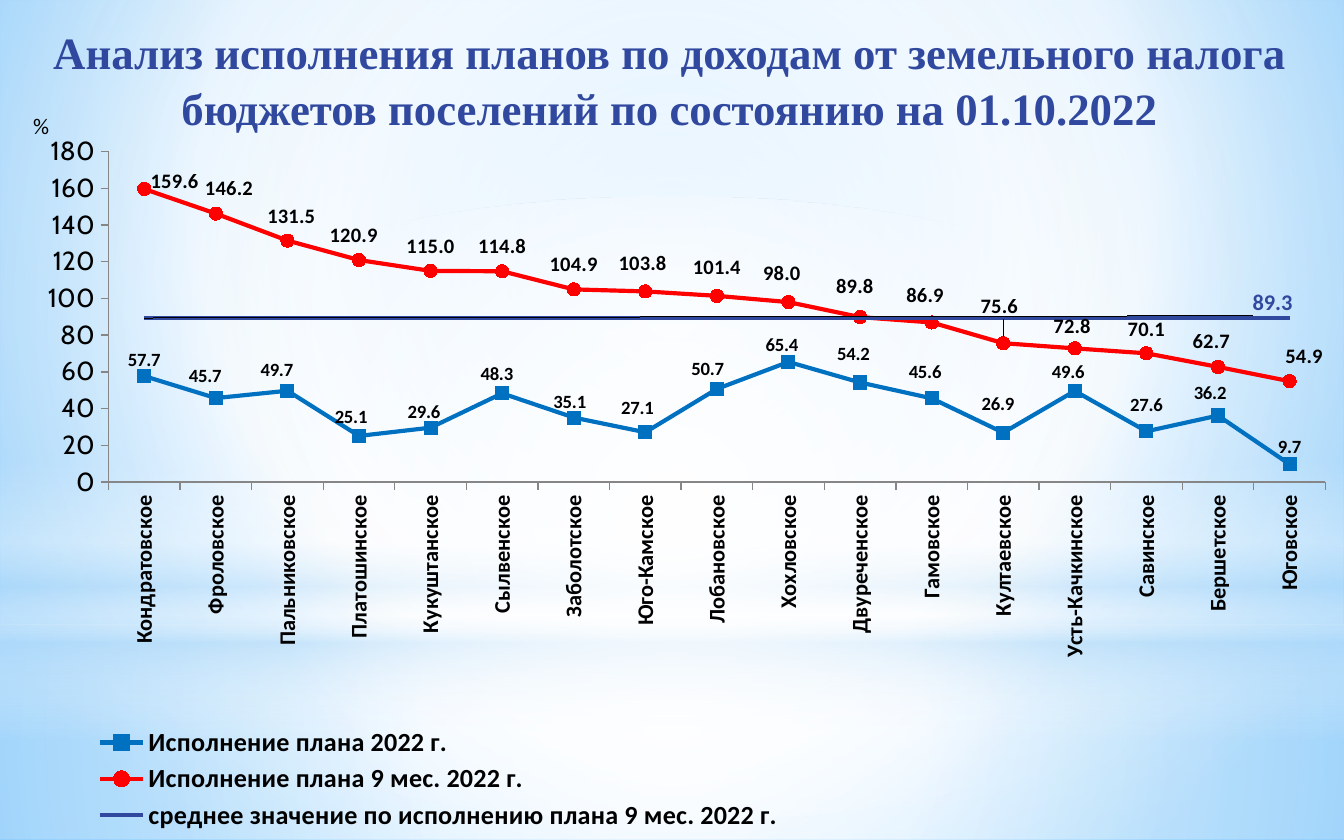
from lxml.etree import SubElement
from pptx import Presentation
from pptx.chart.data import CategoryChartData
from pptx.dml.color import RGBColor
from pptx.enum.chart import (XL_CHART_TYPE, XL_LABEL_POSITION, XL_LEGEND_POSITION,
                             XL_MARKER_STYLE, XL_TICK_MARK)
from pptx.enum.shapes import MSO_SHAPE
from pptx.enum.text import PP_ALIGN
from pptx.oxml.ns import qn
from pptx.util import Cm, Pt

COLORS = {"navy": "31489F", "blue": "0070C0", "red": "FF0000", "black": "000000",
          "axis": "868686", "white": "FFFFFF", "pale": "B4DCFA",
          "sky": "9ED5FF", "deep_sky": "5BB9FF"}
CENTER = (50, 50, 50, 50)
TITLE = ("Анализ исполнения планов по доходам от земельного налога "
         "бюджетов поселений по состоянию на 01.10.2022")
SETTLEMENTS = ["Кондратовское", "Фроловское", "Пальниковское", "Платошинское",
               "Кукуштанское", "Сылвенское", "Заболотское", "Юго-Камское",
               "Лобановское", "Хохловское", "Двуреченское", "Гамовское",
               "Култаевское", "Усть-Качкинское", "Савинское", "Бершетское",
               "Юговское"]
# Label shifts are in thousandths of the chart's width and height, by point.
SERIES = [
    {"name": "Исполнение плана 2022 г.", "color": "blue", "size": 10,
     "marker": XL_MARKER_STYLE.SQUARE, "label_all": True,
     "values": [57.7, 45.7, 49.7, 25.1, 29.6, 48.3, 35.1, 27.1, 50.7, 65.4,
                54.2, 45.6, 26.9, 49.6, 27.6, 36.2, 9.7],
     "label_color": "black",
     "shifts": dict(enumerate([
         (0, 8), (-8, 0), (-8, 3), (-6, 5), (-5, 9), (-4, 4), (-3, 9), (-6, -3),
         (-7, 3), (-5, 7), (-5, -8), (-5, -5), (-4, -8), (-5, 5), (0, -5),
         (-6, 0), (0, 7)]))},
    {"name": "Исполнение плана 9 мес. 2022 г.", "color": "red", "size": 11,
     "marker": XL_MARKER_STYLE.CIRCLE, "label_all": True,
     "values": [159.6, 146.2, 131.5, 120.9, 115, 114.8, 104.9, 103.8, 101.4, 98,
                89.8, 86.9, 75.6, 72.8, 70.1, 62.7, 54.9],
     "label_color": "black",
     "shifts": {0: (23, 23), 1: (10, -1), 2: (3, 1), 3: (-4, 0), 7: (-2, -5),
                8: (0, -5), 9: (-5, -5), 10: (-4, -8), 11: (-5, -3),
                12: (-3, -16), 13: (-2, 4), 14: (0, 1), 15: (-5, -1),
                16: (11, 0)}},
    {"name": "среднее значение по исполнению плана 9 мес. 2022 г.",
     "color": "navy", "size": 12, "marker": XL_MARKER_STYLE.NONE,
     "label_all": False, "values": [89.3] * len(SETTLEMENTS),
     "label_color": "navy", "shifts": {0: (853, 4)}},
]


def rgb(name):
    return RGBColor.from_string(COLORS[name])


def set_font(font, color="black", **fmt):
    for key, value in fmt.items():
        setattr(font, key, value)
    font.color.rgb = rgb(color)


def set_gradient(fill, owner, stops, focus=None, angle=90):
    """Fill with (percent, colour, opacity) stops, round a focus or along an angle."""
    fill.gradient()
    grad = owner.xpath(".//a:gradFill")[0]
    for child in list(grad):
        grad.remove(child)
    gs_list = SubElement(grad, qn("a:gsLst"))
    for pos, color, opacity in stops:
        gs = SubElement(gs_list, qn("a:gs"), pos=str(pos * 1000))
        clr = SubElement(gs, qn("a:srgbClr"), val=COLORS[color])
        SubElement(clr, qn("a:alpha"), val=str(opacity * 1000))
    if focus:
        way = SubElement(grad, qn("a:path"), path="circle")
        SubElement(way, qn("a:fillToRect"),
                   {side: str(v * 1000) for side, v in zip("ltrb", focus)})
    else:
        SubElement(grad, qn("a:lin"), ang=str(angle * 60000), scaled="0")


def add_glow(slide, kind, top, height, stops, focus=None):
    """Add a translucent gradient shape over the whole slide width."""
    sp = slide.shapes.add_shape(kind, 0, Cm(top), Cm(25.4), Cm(height))
    sp.shadow.inherit = False
    sp.line.fill.background()
    set_gradient(sp.fill, sp.element, stops, focus)


def add_backdrop(slide):
    set_gradient(slide.background.fill, slide.element,
                 [(0, "sky", 100), (60, "white", 100), (100, "deep_sky", 100)],
                 (20, 10, 20, 60))
    rect = MSO_SHAPE.RECTANGLE
    add_glow(slide, rect, 11.81, 4.06,
             [(0, "white", 91), (37, "white", 76), (100, "pale", 79)], CENTER)
    add_glow(slide, rect, 0, 11.81,
             [(0, "white", 89), (48, "white", 62), (100, "pale", 79)], CENTER)
    add_glow(slide, rect, 8.71, 5.28,
             [(0, "white", 0), (29, "white", 30), (45, "pale", 40),
              (55, "white", 26), (65, "pale", 60), (100, "white", 0)])
    add_glow(slide, MSO_SHAPE.OVAL, 3.71, 11.81,
             [(0, "white", 100), (56, "white", 0)], CENTER)


def add_title(slide):
    tf = slide.shapes.add_textbox(0, Cm(0.3), Cm(25.3), Cm(2.4)).text_frame
    tf.word_wrap = True
    p = tf.paragraphs[0]
    p.alignment = PP_ALIGN.CENTER
    p.line_spacing = 1.04
    r = p.add_run()
    r.text = TITLE
    set_font(r.font, "navy", name="Times New Roman", size=Pt(24), bold=True)


def place(chart, before, modes=(), **box):
    """Put a manual layout behind the chart element found by the XPath."""
    anchor = chart.element.xpath(before)[0]
    for old in anchor.getparent().findall(qn("c:layout")):
        anchor.getparent().remove(old)
    layout = anchor.makeelement(qn("c:layout"), {})
    manual = SubElement(layout, qn("c:manualLayout"))
    for tag, value in [*modes, *box.items()]:
        SubElement(manual, qn(f"c:{tag}"), val=str(value))
    anchor.addnext(layout)


def style_series(chart, number, ser, spec):
    ser.smooth = False
    ser.format.line.color.rgb = rgb(spec["color"])
    ser.format.line.width = Pt(2.25)
    ser.marker.style = spec["marker"]
    if spec["marker"] != XL_MARKER_STYLE.NONE:
        ser.marker.size = 7
        ser.marker.format.fill.solid()
        ser.marker.format.fill.fore_color.rgb = rgb(spec["color"])
        ser.marker.format.line.color.rgb = rgb(spec["color"])
    fmt = {"name": "Calibri", "size": Pt(spec["size"]), "bold": True}
    labels = ser.data_labels
    labels.show_value = spec["label_all"]
    labels.position = XL_LABEL_POSITION.ABOVE
    set_font(labels.font, spec["label_color"], **fmt)
    for i, (dx, dy) in spec["shifts"].items():
        label = ser.points[i].data_label
        set_font(label.font, spec["label_color"], **fmt)
        label.position = XL_LABEL_POSITION.ABOVE
        place(chart, f".//c:ser[{number}]//c:dLbl/c:idx[@val='{i}']",
              x=dx / 1000, y=dy / 1000)


def style_axes(chart):
    cat, val = chart.category_axis, chart.value_axis
    for axis in (cat, val):
        axis.has_major_gridlines = False
        axis.major_tick_mark = XL_TICK_MARK.OUTSIDE
        axis.format.line.color.rgb = rgb("axis")
    set_font(cat.tick_labels.font, name="Calibri", size=Pt(12), bold=True)
    chart.element.xpath(".//c:catAx/c:txPr/a:bodyPr")[0].set("rot", "-5400000")
    set_font(val.tick_labels.font, name="Cabin", size=Pt(14), bold=False)
    for key, value in {"minimum_scale": 0, "maximum_scale": 180, "major_unit": 20}.items():
        setattr(val, key, value)
    val.tick_labels.number_format = "#,##0"
    val.tick_labels.number_format_is_linked = False
    tf = val.axis_title.text_frame
    tf.text = "%"
    set_font(tf.paragraphs[0].runs[0].font, name="Calibri", size=Pt(12), bold=False)
    chart.element.xpath(".//c:valAx/c:title//a:bodyPr")[0].set("rot", "0")
    place(chart, ".//c:valAx/c:title/c:tx",
          [("xMode", "edge"), ("yMode", "edge")], x=0.01, y=0.02)


def add_line_chart(slide):
    data = CategoryChartData(number_format="#,##0.0")
    data.categories = SETTLEMENTS
    for spec in SERIES:
        data.add_series(spec["name"], spec["values"])
    chart = slide.shapes.add_chart(XL_CHART_TYPE.LINE_MARKERS, Cm(0.3), Cm(1.73),
                                   Cm(25), Cm(14.2), data).chart
    set_font(chart.font, name="Cabin", size=Pt(18))
    chart.has_title = False
    chart.plots[0].vary_by_categories = False
    for number, (ser, spec) in enumerate(zip(chart.plots[0].series, SERIES), 1):
        style_series(chart, number, ser, spec)
    style_axes(chart)
    chart.has_legend = True
    chart.legend.position = XL_LEGEND_POSITION.BOTTOM
    chart.legend.include_in_layout = False
    set_font(chart.legend.font, name="Calibri", size=Pt(14), bold=True)
    edges = [("xMode", "edge"), ("yMode", "edge")]
    place(chart, ".//c:legend/c:legendPos", edges, x=0.04, y=0.84, w=0.56, h=0.15)
    plot_area = chart.element.xpath(".//c:plotArea")[0]
    for old in plot_area.findall(qn("c:layout")):
        plot_area.remove(old)
    place(chart, ".//c:plotArea/c:lineChart", [("layoutTarget", "inner"), *edges],
          x=0.07, y=0.08, w=0.92, h=0.44)
    plot_area.insert(0, plot_area.find(qn("c:layout")))


def main():
    prs = Presentation()
    prs.slide_width, prs.slide_height = Cm(25.4), Cm(15.88)
    slide = prs.slides.add_slide(prs.slide_layouts[6])
    add_backdrop(slide)
    add_title(slide)
    add_line_chart(slide)
    prs.save("out.pptx")


if __name__ == "__main__":
    main()
